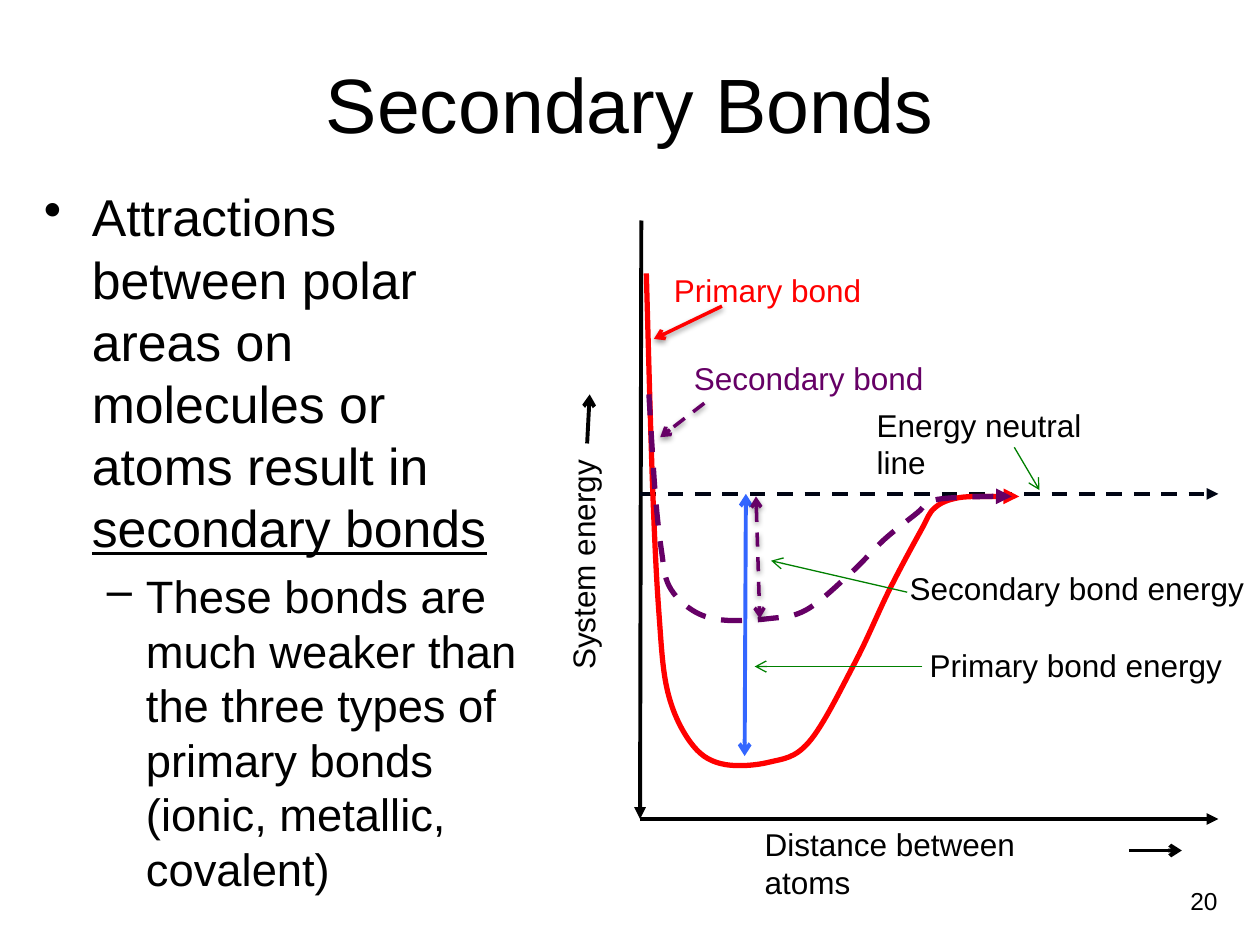
"""Build the Secondary Bonds slide with its bond energy diagram."""
from dataclasses import dataclass
from typing import Optional

import pptx
import pptx.dml.color
import pptx.enum.dml
import pptx.enum.shapes
import pptx.enum.text
import pptx.oxml
import pptx.oxml.ns
import pptx.util
from pptx.util import Inches, Pt

RGBColor = pptx.dml.color.RGBColor
BLACK = RGBColor(0x00, 0x00, 0x00)
NAVY = RGBColor(0x00, 0x05, 0x14)
RED = RGBColor(0xFF, 0x00, 0x00)
BLUE = RGBColor(0x33, 0x66, 0xFF)
GREEN = RGBColor(0x00, 0x80, 0x00)
PURPLE = RGBColor(0x66, 0x00, 0x66)
FONT = "Arial"
Point = tuple[float, float]


@dataclass
class Arrow:
    start: Point
    end: Point
    color: RGBColor
    width: float
    tail: str = "arrow"
    head: Optional[str] = None
    dashed: bool = False
    shadow: bool = False


@dataclass
class Label:
    text: str
    left: float
    top: float
    width: float
    color: RGBColor = BLACK
    wrap: bool = False
    rotation: int = 0


@dataclass
class Curve:
    knots: list[Point]
    color: RGBColor
    dashed: bool = False


@dataclass
class Bullet:
    runs: list[tuple[str, bool]]
    mark: str
    size: float
    margin: float
    hanging: float
    space_before: float


AXES = [
    Arrow((5.09, 1.75), (5.08, 6.5), BLACK, 2.25, "triangle"),
    Arrow((5.08, 6.5), (9.67, 6.5), BLACK, 2.25, "triangle"),
    Arrow((5.08, 3.92), (9.67, 3.92), NAVY, 2.25, "triangle", dashed=True),
]
PRIMARY_CURVE = Curve(
    [(5.13, 2.17), (5.18, 3.86), (5.23, 4.86), (5.3, 5.49), (5.48, 5.89),
     (5.72, 6.06), (6.1, 6.05), (6.42, 5.89), (6.78, 5.27), (7.06, 4.68),
     (7.31, 4.21), (7.42, 4.03), (7.61, 3.95), (7.92, 3.94), (8.09, 3.94)],
    RED)
SECONDARY_CURVE = Curve(
    [(5.15, 3.13), (5.2, 3.91), (5.25, 4.37), (5.31, 4.65), (5.49, 4.84),
     (5.73, 4.92), (6.1, 4.91), (6.4, 4.84), (6.75, 4.55), (7.02, 4.28),
     (7.28, 4.07), (7.38, 3.98), (7.57, 3.95), (7.86, 3.94), (8.03, 3.94)],
    PURPLE, dashed=True)
PRIMARY_ARROWS = [
    Arrow((5.92, 3.92), (5.91, 6), BLUE, 2.25, head="arrow"),
    Arrow((7.32, 5.29), (5.99, 5.29), GREEN, 0.75),
    Arrow((8.96, 6.75), (9.38, 6.75), BLACK, 2.25),
    Arrow((4.66, 3.52), (4.68, 3.13), BLACK, 2.25),
    Arrow((8.05, 3.55), (8.25, 3.89), GREEN, 0.75),
    Arrow((5.73, 2.43), (5.19, 2.69), RED, 2, shadow=True),
]
SECONDARY_ARROWS = [
    Arrow((5.59, 3.2), (5.24, 3.47), PURPLE, 2, dashed=True, shadow=True),
    Arrow((6, 3.94), (6.03, 4.91), PURPLE, 2, head="arrow", dashed=True, shadow=True),
    Arrow((7.2, 4.7), (6.12, 4.45), GREEN, 0.75),
]
LABELS = [
    Label("Distance between atoms", 5.97, 6.5, 2.59, wrap=True),
    Label("System energy", 3.68, 4.27, 1.89, rotation=270),
    Label("Primary bond energy", 7.28, 5.08, 2.55),
    Label("Energy neutral line", 6.86, 3.17, 2.07, wrap=True),
    Label("Primary bond", 5.25, 2.1, 1.7, RED),
    Label("Secondary bond", 5.41, 2.8, 2.04, PURPLE),
    Label("Secondary bond energy", 7.12, 4.47, 2.88),
]
BULLETS = [
    Bullet([("Attractions between polar areas on molecules or atoms result in ", False),
            ("secondary bonds", True)], "•", 29.6, 0.38, 0.38, 0),
    Bullet([("These bonds are much weaker than the three types of primary bonds "
             "(ionic, metallic, covalent)", False)], "–", 25.9, 0.81, 0.31, 6),
]


def format_font(font, size: float, color: RGBColor = BLACK) -> None:
    font.name = FONT
    font.size = Pt(size)
    font.color.rgb = color


def format_line(line, color: RGBColor, width: float, dashed: bool,
                tail: str, head: Optional[str] = None) -> None:
    line.color.rgb = color
    line.width = Pt(width)
    if dashed:
        line.dash_style = pptx.enum.dml.MSO_LINE.DASH
    properties = line._get_or_add_ln()
    for tag, kind in (("a:headEnd", head), ("a:tailEnd", tail)):
        if kind:
            properties.append(pptx.oxml.parse_xml(
                f'<{tag} {pptx.oxml.ns.nsdecls("a")} type="{kind}"/>'))


def add_arrow(slide, arrow: Arrow) -> None:
    connector = slide.shapes.add_connector(
        pptx.enum.shapes.MSO_CONNECTOR.STRAIGHT,
        *(Inches(value) for value in arrow.start + arrow.end))
    format_line(connector.line, arrow.color, arrow.width, arrow.dashed,
                arrow.tail, arrow.head)
    shadow = ('<a:outerShdw blurRad="40000" dist="20000" dir="5400000">'
              '<a:srgbClr val="000000"><a:alpha val="38000"/></a:srgbClr>'
              '</a:outerShdw>') if arrow.shadow else ""
    connector._element.spPr.append(pptx.oxml.parse_xml(
        f'<a:effectLst {pptx.oxml.ns.nsdecls("a")}>{shadow}</a:effectLst>'))


def round_segments(shape) -> None:
    nodes = shape._element.xpath(".//a:pt")
    knots = [(int(node.get("x")), int(node.get("y"))) for node in nodes]
    padded = [knots[0], *knots, knots[-1]]
    segments = shape._element.xpath(".//a:lnTo")
    for segment, before, start, end, after in zip(
            segments, padded, padded[1:], padded[2:], padded[3:]):
        leave = [s + (e - b) / 6 for b, s, e in zip(before, start, end)]
        arrive = [e - (a - s) / 6 for s, e, a in zip(start, end, after)]
        points = "".join(f'<a:pt x="{round(x)}" y="{round(y)}"/>'
                         for x, y in (leave, arrive, end))
        segment.getparent().replace(segment, pptx.oxml.parse_xml(
            f'<a:cubicBezTo {pptx.oxml.ns.nsdecls("a")}>{points}</a:cubicBezTo>'))


def add_curve(slide, curve: Curve) -> None:
    first, *rest = [(Inches(x), Inches(y)) for x, y in curve.knots]
    builder = slide.shapes.build_freeform(*first)
    builder.add_line_segments(rest, close=False)
    shape = builder.convert_to_shape()
    round_segments(shape)
    shape.shadow.inherit = False
    shape.fill.background()
    format_line(shape.line, curve.color, 3, curve.dashed, "triangle")


def add_text_box(slide, left: float, top: float, width: float, height: float, wrap: bool):
    box = slide.shapes.add_textbox(Inches(left), Inches(top), Inches(width), Inches(height))
    box.text_frame.word_wrap = wrap
    return box


def add_label(slide, label: Label) -> None:
    box = add_text_box(slide, label.left, label.top, label.width, 0.4, label.wrap)
    box.rotation = label.rotation
    box.text_frame.auto_size = pptx.enum.text.MSO_AUTO_SIZE.SHAPE_TO_FIT_TEXT
    box.text_frame.text = label.text
    format_font(box.text_frame.paragraphs[0].runs[0].font, 18, label.color)


def add_bullet(paragraph, bullet: Bullet) -> None:
    properties = paragraph._p.get_or_add_pPr()
    properties.set("marL", str(Inches(bullet.margin)))
    properties.set("indent", str(-Inches(bullet.hanging)))
    properties.append(pptx.oxml.parse_xml(
        f'<a:buChar {pptx.oxml.ns.nsdecls("a")} char="{bullet.mark}"/>'))
    paragraph.space_before = Pt(bullet.space_before)
    for text, underlined in bullet.runs:
        run = paragraph.add_run()
        run.text = text
        format_font(run.font, bullet.size)
        run.font.underline = underlined


def main() -> None:
    presentation = pptx.Presentation()
    presentation.slide_width, presentation.slide_height = Inches(10), Inches(7.5)
    slide = presentation.slides.add_slide(presentation.slide_layouts[5])
    title = slide.shapes.title
    title.left, title.top, title.width, title.height = map(Inches, (0.5, 0.3, 9, 1.03))
    title.text_frame.text = "Secondary Bonds"
    title.text_frame.vertical_anchor = pptx.enum.text.MSO_ANCHOR.MIDDLE
    title.text_frame.paragraphs[0].alignment = pptx.enum.text.PP_ALIGN.CENTER
    format_font(title.text_frame.paragraphs[0].runs[0].font, 44)

    body = add_text_box(slide, 0.25, 1.42, 4.05, 5.58, True).text_frame
    for index, bullet in enumerate(BULLETS):
        add_bullet(body.add_paragraph() if index else body.paragraphs[0], bullet)

    number = add_text_box(slide, 9.25, 6.98, 0.61, 0.36, True).text_frame
    number.text = "20"
    number.paragraphs[0].alignment = pptx.enum.text.PP_ALIGN.CENTER
    format_font(number.paragraphs[0].runs[0].font, 14)

    for arrow in AXES:
        add_arrow(slide, arrow)
    add_curve(slide, PRIMARY_CURVE)
    for arrow in PRIMARY_ARROWS:
        add_arrow(slide, arrow)
    add_curve(slide, SECONDARY_CURVE)
    for arrow in SECONDARY_ARROWS:
        add_arrow(slide, arrow)
    for label in LABELS:
        add_label(slide, label)
    presentation.save("out.pptx")


if __name__ == "__main__":
    main()
